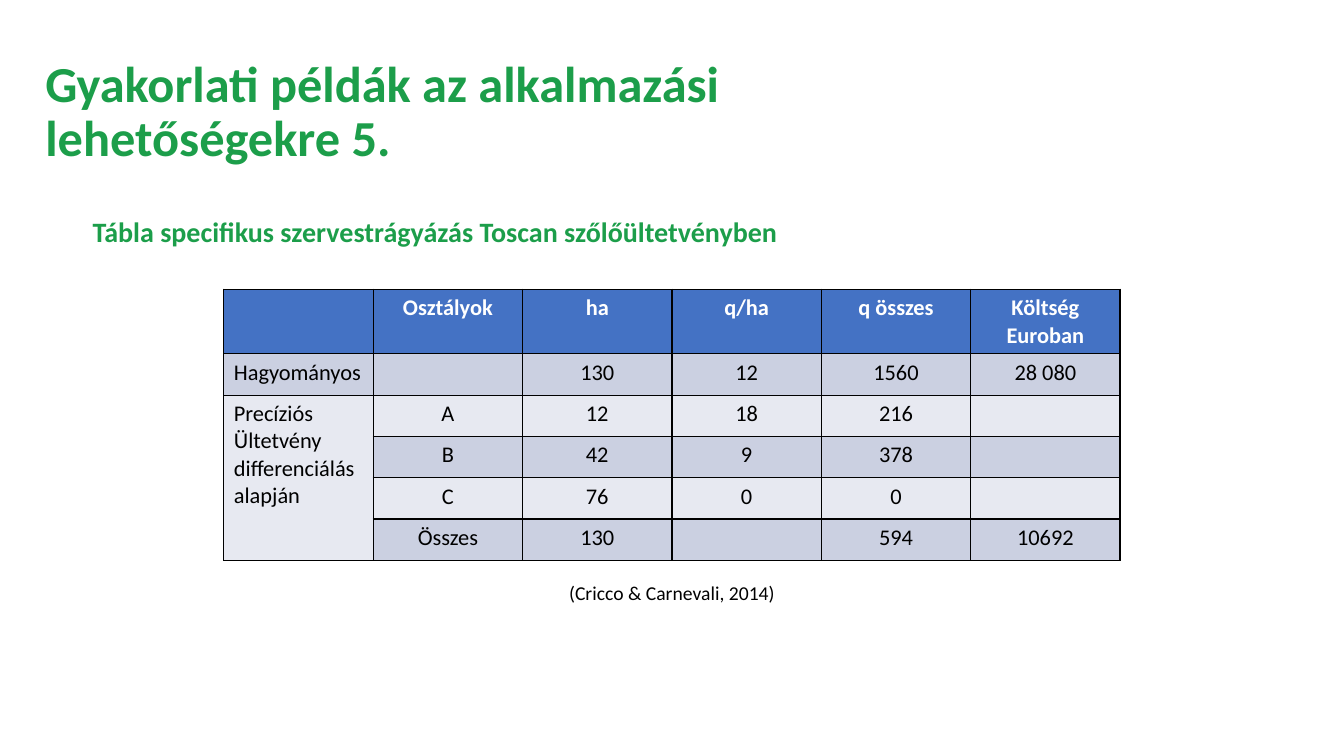
"""Build the slide on site-specific manuring in a vineyard."""
from lxml import etree
from pptx import Presentation
from pptx import util as u
from pptx.dml.color import RGBColor
from pptx.enum import text
from pptx.oxml import ns

HUES = {"green": "1C9E4A", "blue": "4472C4", "dark": "CBD0E1",
        "light": "E7E9F1", "black": "000000", "white": "FFFFFF"}
LEFT, MID = text.PP_ALIGN.LEFT, text.PP_ALIGN.CENTER


def write(frame, words, size=16, hue="black", bold=False, align=MID, lead=None):
    frame.word_wrap = True
    frame.text = words
    for para in frame.paragraphs:
        para.alignment = align
        para.line_spacing = lead
        for run in para.runs:
            run.font.name = "Calibri"
            run.font.size = u.Pt(size)
            run.font.bold = bold
            run.font.color.rgb = RGBColor.from_string(HUES[hue])
        for gap in para._p.findall(ns.qn("a:br")):
            etree.SubElement(gap, ns.qn("a:rPr"), sz=str(size * 100))


def edge(cell):
    props = cell._tc.get_or_add_tcPr()
    for i, side in enumerate(("lnL", "lnR", "lnT", "lnB")):
        line = etree.Element(ns.qn("a:" + side), w=str(u.Pt(1)))
        fill = etree.SubElement(line, ns.qn("a:solidFill"))
        etree.SubElement(fill, ns.qn("a:srgbClr"), val=HUES["black"])
        props.insert(i, line)


deck = Presentation()
deck.slide_width, deck.slide_height = u.Inches(13.33), u.Inches(7.5)
slide = deck.slides.add_slide(deck.slide_layouts[5])

title = slide.shapes.title
title.left, title.top = u.Inches(0.35), u.Inches(0.4)
title.width, title.height = u.Inches(12.64), u.Inches(1.45)
write(title.text_frame, "Gyakorlati példák az alkalmazási \vlehetőségekre 5.",
      size=36, hue="green", bold=True, align=LEFT, lead=0.9)
title.text_frame.auto_size = text.MSO_AUTO_SIZE.NONE
title.text_frame.vertical_anchor = text.MSO_ANCHOR.MIDDLE

head = slide.shapes.add_textbox(u.Inches(0.82), u.Inches(2.12),
                                u.Inches(11.5), u.Inches(0.62))
write(head.text_frame, "Tábla specifikus szervestrágyázás Toscan szőlőültetvényben",
      size=20, hue="green", bold=True, align=LEFT, lead=0.9)

rows = [
    ["", "Osztályok", "ha", "q/ha", "q összes", "Költség Euroban"],
    ["Hagyományos", "", "130", "12", "1560", "28 080"],
    ["Precíziós\nÜltetvény differenciálás alapján", "A", "12", "18", "216", ""],
    ["", "B", "42", "9", "378", ""],
    ["", "C", "76", "0", "0", ""],
    ["", "Összes", "130", "", "594", "10692"],
]
grid = slide.shapes.add_table(len(rows), len(rows[0]), u.Inches(2.22), u.Inches(2.87),
                              u.Inches(8.89), u.Inches(2.66)).table
for r, row in enumerate(rows):
    grid.rows[r].height = u.Inches(0.41 if r else 0.64)
    for c, words in enumerate(row):
        cell = grid.cell(r, c)
        tint = "blue" if r == 0 else "dark" if r % 2 else "light"
        cell.fill.solid()
        cell.fill.fore_color.rgb = RGBColor.from_string(HUES[tint])
        edge(cell)
        write(cell.text_frame, words, hue="black" if r else "white",
              bold=r == 0, align=MID if c else LEFT)
grid.cell(2, 0).merge(grid.cell(5, 0))

cite = slide.shapes.add_textbox(u.Inches(4.52), u.Inches(5.71),
                                u.Inches(4.29), u.Inches(0.34))
write(cite.text_frame, "(Cricco & Carnevali, 2014)", size=14)

deck.save("out.pptx")
